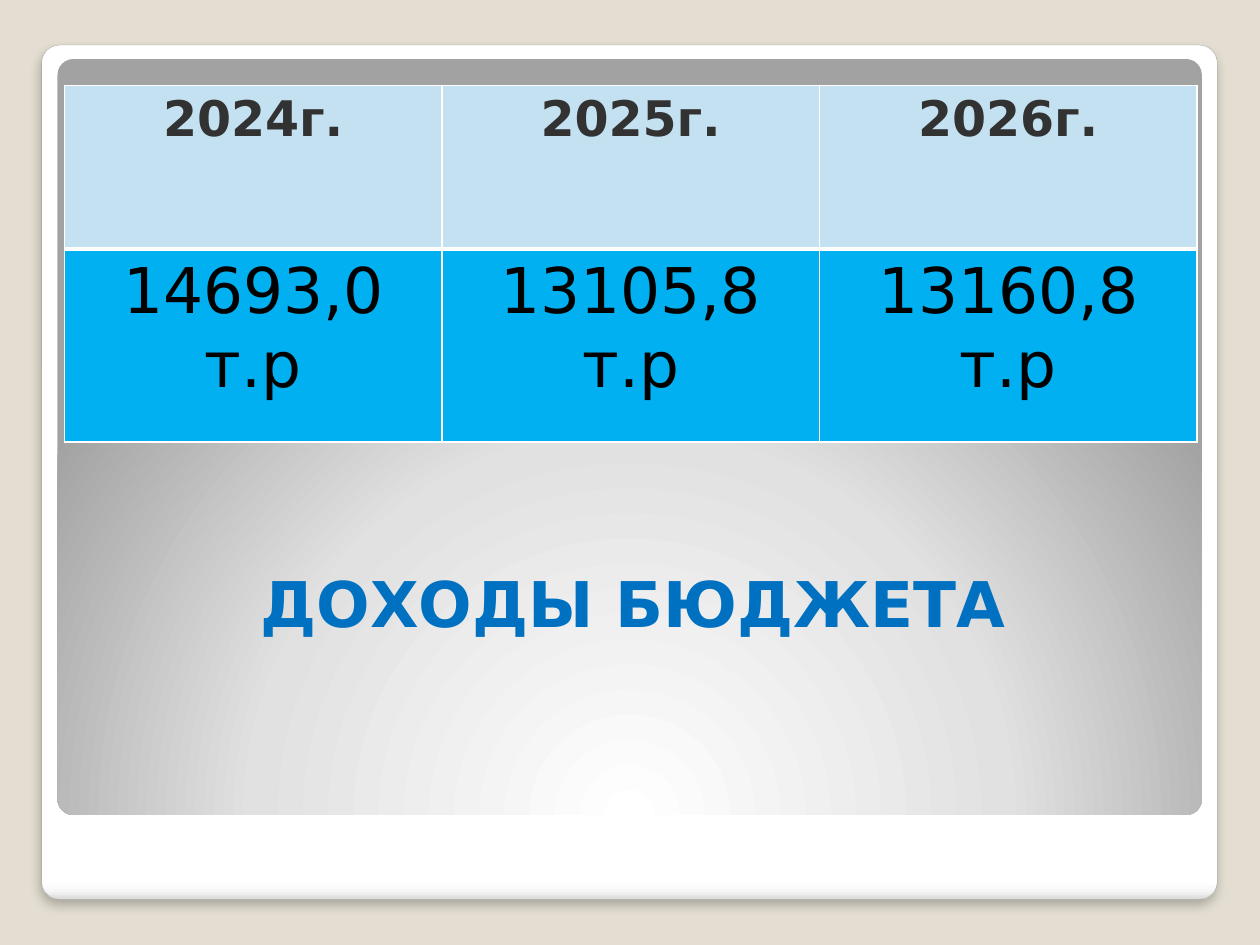
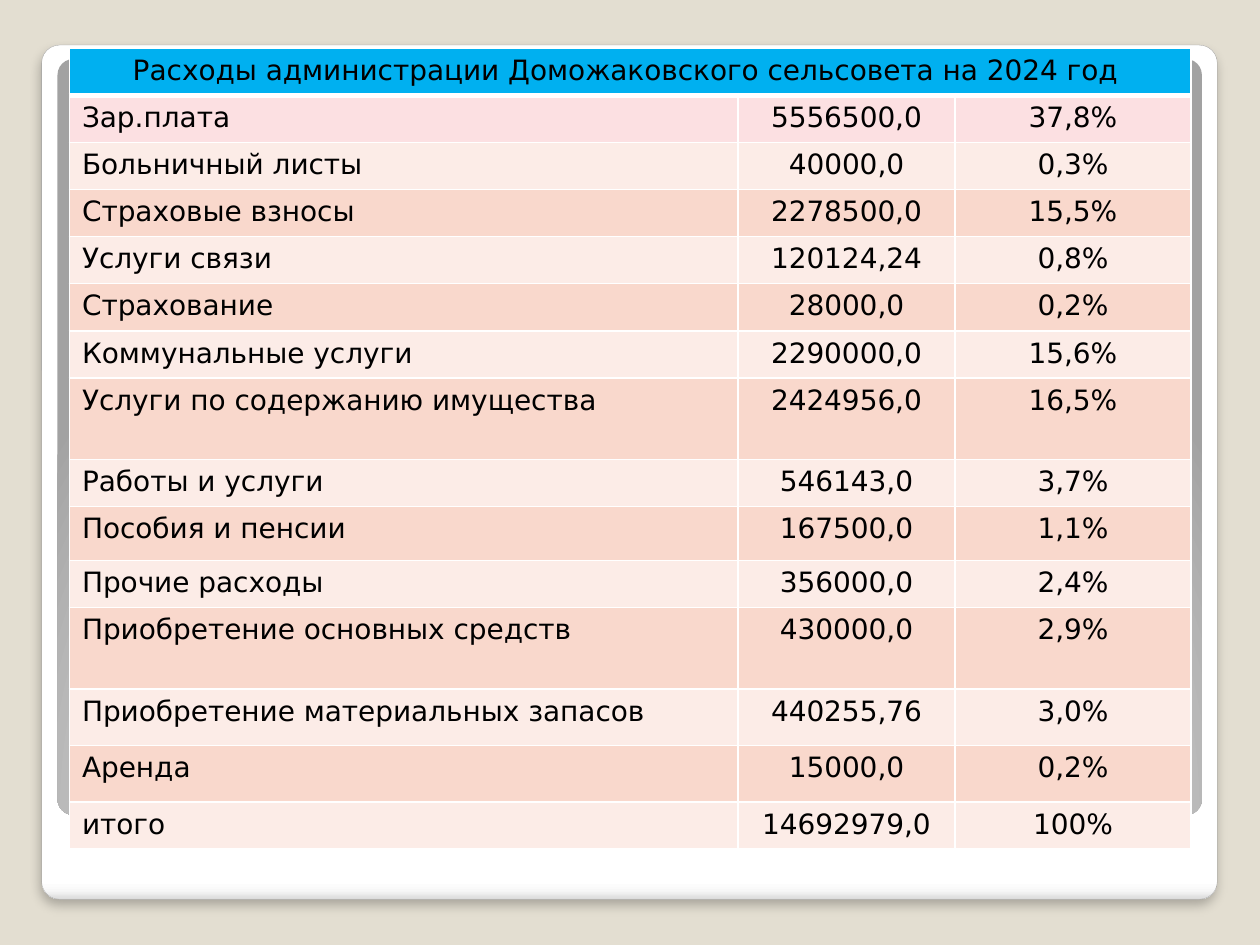
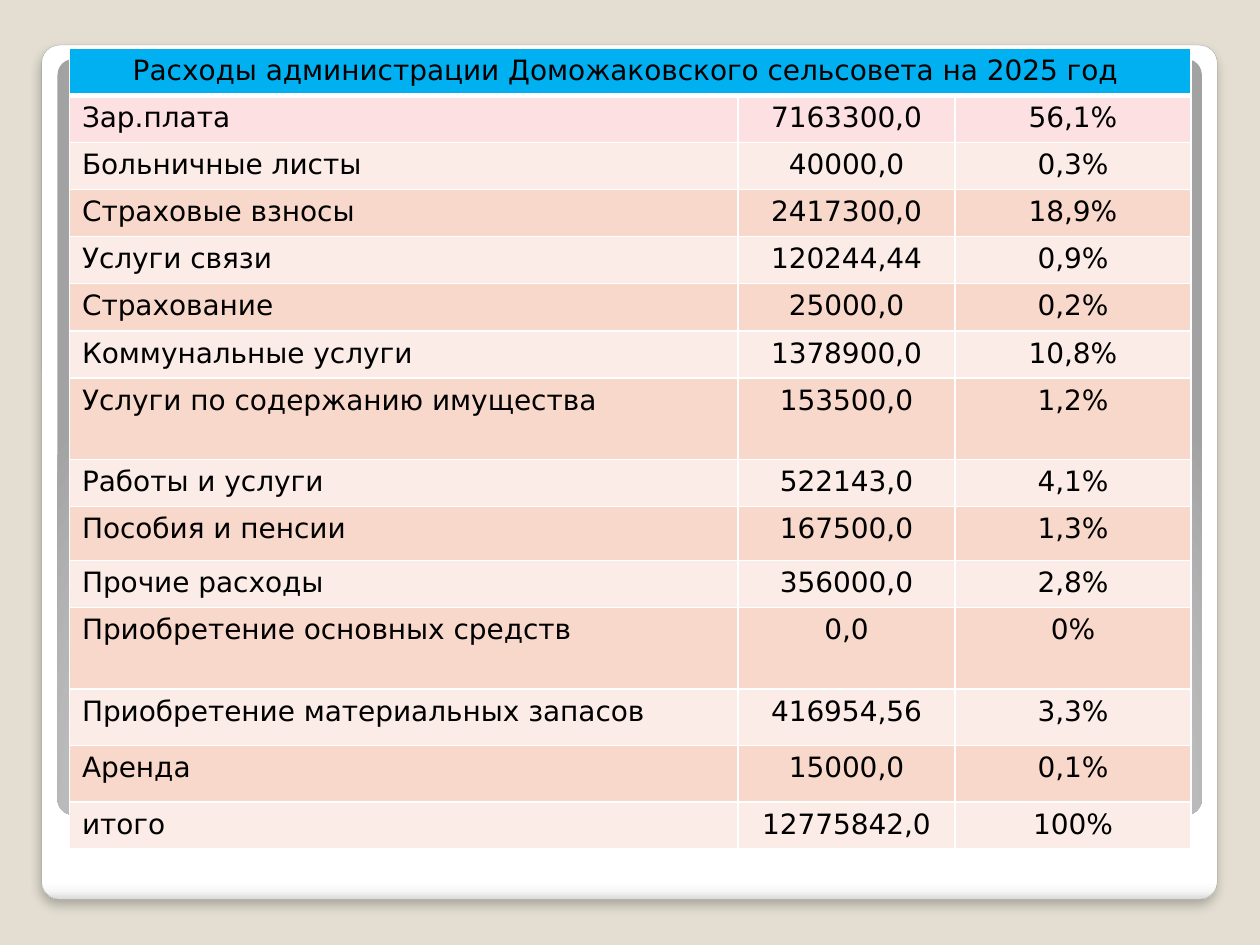
import pptx
import pptx.dml.color
import pptx.enum.shapes
import pptx.enum.text
import pptx.oxml
import pptx.oxml.ns
import pptx.util

Cm, Pt = pptx.util.Cm, pptx.util.Pt
ALIGN = pptx.enum.text.PP_ALIGN
NS = pptx.oxml.ns.nsdecls("a")

FONT = "DejaVu Sans"
WHITE, BLACK, SAND = "FFFFFF", "000000", "E3DED1"
BLUE, SKY, PALE, DARK = "0070C0", "00B0F0", "C4E1F2", "323232"
PINK, LIGHT, PEACH = "FCE0E2", "FCECE7", "F9D8CC"

TITLE = {"name": FONT, "size": Pt(36), "bold": True}
YEAR = {"name": FONT, "size": Pt(28), "bold": True}
TOTAL = {"name": FONT, "size": Pt(36), "bold": False}
BODY = {"name": FONT, "size": Pt(16), "bold": False}

CARD = (0.84, 0.91, 23.7, 17.22)
PANEL = (1.16, 1.19, 23.07, 15.24)
LINEAR = '<a:lin ang="5400000" scaled="0"/>'
RADIAL = ('<a:path path="circle"><a:fillToRect l="50000" t="175000" '
          'r="50000" b="-75000"/></a:path>')
SHADOW = (f'<a:outerShdw {NS} blurRad="76200" dist="50800" dir="5400000" '
          'algn="t" rotWithShape="0"><a:srgbClr val="000000">'
          '<a:alpha val="25000"/></a:srgbClr></a:outerShdw>')

INCOME = {"2024г.": "14693,0 т.р", "2025г.": "13105,8 т.р", "2026г.": "13160,8 т.р"}
ITEMS = ["Страховые взносы", "Услуги связи", "Страхование", "Коммунальные услуги",
         "Услуги по содержанию имущества", "Работы и услуги", "Пособия и пенсии",
         "Прочие расходы", "Приобретение основных средств",
         "Приобретение материальных запасов", "Аренда", "итого"]
COSTS = {
    2024: ("Больничный листы",
           ["5556500,0", "40000,0", "2278500,0", "120124,24", "28000,0",
            "2290000,0", "2424956,0", "546143,0", "167500,0", "356000,0",
            "430000,0", "440255,76", "15000,0", "14692979,0"],
           ["37,8%", "0,3%", "15,5%", "0,8%", "0,2%", "15,6%", "16,5%",
            "3,7%", "1,1%", "2,4%", "2,9%", "3,0%", "0,2%", "100%"]),
    2025: ("Больничные листы",
           ["7163300,0", "40000,0", "2417300,0", "120244,44", "25000,0",
            "1378900,0", "153500,0", "522143,0", "167500,0", "356000,0",
            "0,0", "416954,56", "15000,0", "12775842,0"],
           ["56,1%", "0,3%", "18,9%", "0,9%", "0,2%", "10,8%", "1,2%",
            "4,1%", "1,3%", "2,8%", "0%", "3,3%", "0,1%", "100%"]),
}


def color(code):
    return pptx.dml.color.RGBColor.from_string(code)


def write(frame, text, style, ink, align=ALIGN.CENTER):
    para = frame.paragraphs[0]
    para.alignment = align
    run = para.add_run()
    run.text = text
    for key, value in style.items():
        setattr(run.font, key, value)
    run.font.color.rgb = color(ink)


def plate(slide, box, stops, course):
    """Add a rounded plate with a gradient fill."""
    shape = slide.shapes.add_shape(
        pptx.enum.shapes.MSO_SHAPE.ROUNDED_RECTANGLE, *map(Cm, box))
    shape.adjustments[0] = 0.021
    shape.shadow.inherit = False
    shape.fill.background()
    shape.line.fill.background()
    marks = "".join(f'<a:gs pos="{pos * 1000}"><a:srgbClr val="{code}"/></a:gs>'
                    for pos, code in stops)
    fill = pptx.oxml.parse_xml(
        f'<a:gradFill {NS} rotWithShape="1"><a:gsLst>{marks}</a:gsLst>{course}</a:gradFill>')
    props = shape._element.spPr
    props.replace(props.find(pptx.oxml.ns.qn("a:noFill")), fill)
    return shape


def base(deck):
    """Add a slide with the shared background, card and panel."""
    slide = deck.slides.add_slide(deck.slide_layouts[6])
    slide.background.fill.solid()
    slide.background.fill.fore_color.rgb = color(SAND)
    card = plate(slide, CARD,
                 [(0, WHITE), (98, WHITE), (99, "F7F7F7"), (100, "DADADA")], LINEAR)
    card.line.color.rgb = color("A4A4A4")
    card.line.width = Pt(0.16)
    effects = card._element.spPr.find(pptx.oxml.ns.qn("a:effectLst"))
    effects.append(pptx.oxml.parse_xml(SHADOW))
    plate(slide, PANEL, [(0, WHITE), (55, "E1E1E1"), (100, "A2A2A2")], RADIAL)
    return slide


def edge(cell, top, bottom):
    """Draw white cell borders, with the top and bottom widths in points."""
    props = cell._tc.get_or_add_tcPr()
    for at, (side, width) in enumerate(zip("LRTB", (1, 1, top, bottom))):
        props.insert(at, pptx.oxml.parse_xml(
            f'<a:ln{side} {NS} w="{width * 12700}"><a:solidFill>'
            f'<a:srgbClr val="{WHITE}"/></a:solidFill></a:ln{side}>'))


def grid(slide, box, cols, rows, fills):
    """Add a table with one fill per row and a thick rule under its head."""
    table = slide.shapes.add_table(len(rows), len(cols), *map(Cm, box)).table
    table.first_row = table.horz_banding = False
    for col, width in zip(table.columns, cols):
        col.width = Cm(width)
    for i, (row, height) in enumerate(zip(table.rows, rows)):
        row.height = Cm(height)
        for cell in row.cells:
            cell.fill.solid()
            cell.fill.fore_color.rgb = color(fills[i])
            edge(cell, 3 if i == 1 else 1, 3 if i == 0 else 1)
    return table


def income(slide, box):
    left, top, width, _ = box
    title = slide.shapes.add_textbox(
        Cm(left + 0.1), Cm(top + 5.79), Cm(width - 0.1), Cm(9.25)).text_frame
    title.word_wrap = True
    title.vertical_anchor = pptx.enum.text.MSO_ANCHOR.MIDDLE
    write(title, "ДОХОДЫ БЮДЖЕТА", TITLE, BLUE)
    table = grid(slide, box, [width / 3] * 3, [3.3, 3.89], [PALE, SKY])
    for i, (year, total) in enumerate(INCOME.items()):
        write(table.cell(0, i).text_frame, year, YEAR, DARK)
        write(table.cell(1, i).text_frame, total, TOTAL, BLACK)


def costs(slide, box, year):
    sick, sums, shares = COSTS[year]
    names = ["Зар.плата", sick] + ITEMS
    heights = [0.95] * 7 + [1.64, 0.95, 1.09, 0.95, 1.64, 1.14, 1.14, 0.9]
    fills = [SKY, PINK] + [LIGHT, PEACH] * 6 + [LIGHT]
    table = grid(slide, box, [13.48, 4.37, box[2] - 17.85], heights, fills)
    head = table.cell(0, 0)
    head.merge(table.cell(0, 2))
    write(head.text_frame,
          f"Расходы администрации Доможаковского сельсовета на {year} год ", BODY, BLACK)
    for i, line in enumerate(zip(names, sums, shares), 1):
        for j, text in enumerate(line):
            write(table.cell(i, j).text_frame, text, BODY, BLACK,
                  ALIGN.CENTER if j else ALIGN.LEFT)


def main():
    deck = pptx.Presentation()
    deck.slide_width, deck.slide_height = Cm(25.4), Cm(19.05)
    income(base(deck), (1.3, 1.72, 22.83, 7.19))
    for year in COSTS:
        costs(base(deck), (1.4, 0.97, 22.61, 16.18), year)
    deck.save("out.pptx")


if __name__ == "__main__":
    main()
